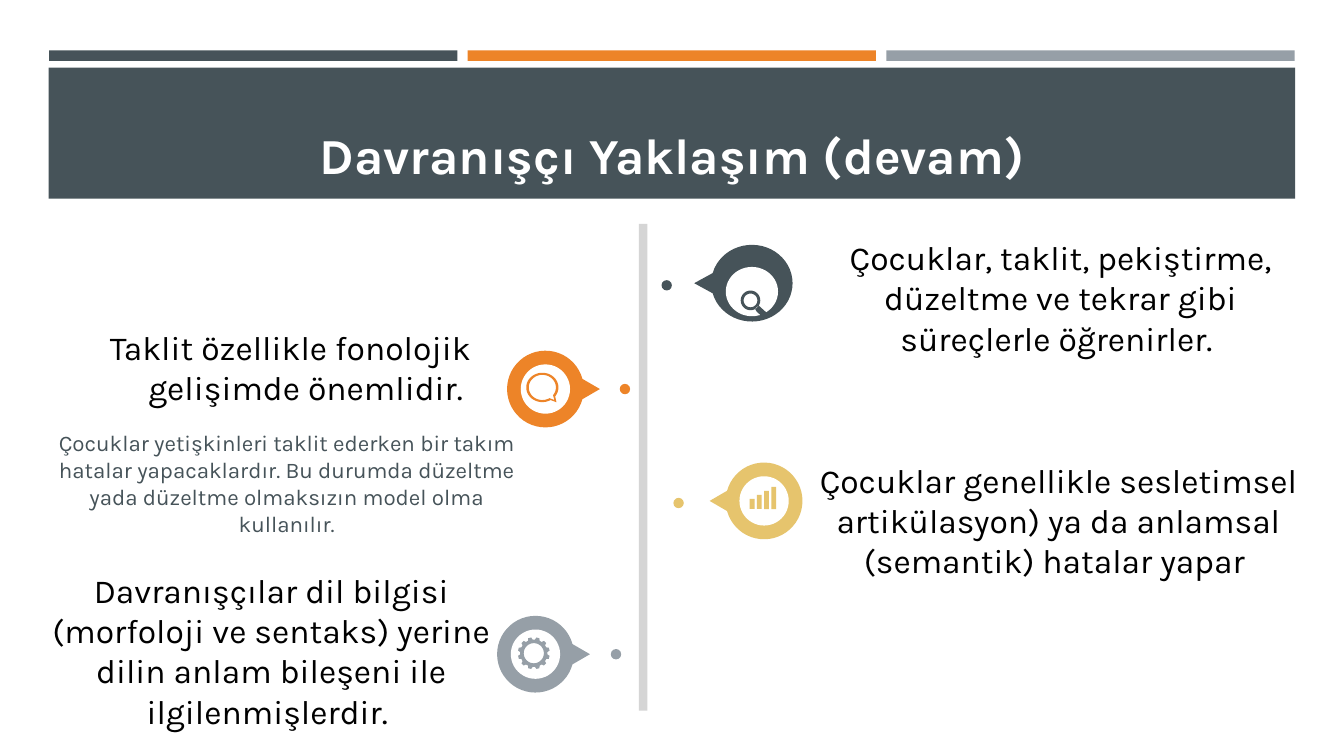
import math

from pptx import Presentation
from pptx import util as u
from pptx.dml.color import RGBColor
from pptx.enum import shapes, text

SLATE, ORANGE, SILVER, SAND = "465359", "ED8428", "969FA7", "E6C46D"
WHITE, BLACK, DIVIDER = "FFFFFF", "000000", "D5D5D5"


def color(value):
    return RGBColor.from_string(value)


def polar(center, radii, degrees):
    angle = math.radians(degrees)
    return (center[0] + radii[0] * math.cos(angle),
            center[1] + radii[1] * math.sin(angle))


def ring_points(center, radius):
    return [polar(center, (radius, radius), step * 10) for step in range(36)]


def drop_points(center, radii, tip, direction, half_gap):
    """Ellipse whose arc opens around one direction and runs out to a tip."""
    steps = 48
    sweep = 360 - 2 * half_gap
    arc = [polar(center, radii, direction + half_gap + sweep * step / steps)
           for step in range(steps + 1)]
    return arc + [(center[0] + tip[0], center[1] + tip[1])]


def gear_points(center, root, outer, teeth=12):
    profile = [(-10, root), (-5.5, outer), (5.5, outer), (10, root)]
    return [polar(center, (radius, radius), 360 / teeth * (tooth + 0.5) + offset)
            for tooth in range(teeth) for offset, radius in profile]


class SlideBuilder:
    font = "Karla"

    def __init__(self, slide):
        self.slide = slide

    def paint(self, shape, fill):
        shape.shadow.inherit = False
        shape.fill.solid()
        shape.fill.fore_color.rgb = color(fill)
        shape.line.fill.background()

    def rectangle(self, left, top, width, height, fill):
        shape = self.slide.shapes.add_shape(
            shapes.MSO_SHAPE.RECTANGLE,
            u.Pt(left), u.Pt(top), u.Pt(width), u.Pt(height))
        self.paint(shape, fill)

    def ellipse(self, center, radii, fill):
        shape = self.slide.shapes.add_shape(
            shapes.MSO_SHAPE.OVAL,
            u.Pt(center[0] - radii[0]), u.Pt(center[1] - radii[1]),
            u.Pt(2 * radii[0]), u.Pt(2 * radii[1]))
        self.paint(shape, fill)

    def outline(self, contours, fill):
        """Filled freeform; a contour inside another one cuts a hole."""
        contours = [[(u.Pt(x), u.Pt(y)) for x, y in contour] for contour in contours]
        builder = self.slide.shapes.build_freeform(*contours[0][0])
        for index, contour in enumerate(contours):
            if index:
                builder.move_to(*contour[0])
            builder.add_line_segments(contour[1:], close=True)
        self.paint(builder.convert_to_shape(), fill)

    def add_text(self, content, left, top, width, height, size=24, fill=BLACK,
                 bold=False, align=text.PP_ALIGN.CENTER,
                 anchor=text.MSO_ANCHOR.TOP, inset=7.2):
        shape = self.slide.shapes.add_textbox(
            u.Pt(left), u.Pt(top), u.Pt(width), u.Pt(height))
        frame = shape.text_frame
        frame.word_wrap = True
        frame.vertical_anchor = anchor
        frame.margin_left = frame.margin_right = u.Pt(inset)
        frame.margin_top = frame.margin_bottom = u.Pt(inset)
        paragraph = frame.paragraphs[0]
        paragraph.alignment = align
        run = paragraph.add_run()
        run.text = content
        run.font.name = self.font
        run.font.size = u.Pt(size)
        run.font.bold = bold
        run.font.color.rgb = color(fill)

    def pin(self, center, dot, fill, points_right, stretch=1.0, hole_drop=0):
        """Round marker with a white hole, pointing at a dot by the divider."""
        x, y = center
        tip = 38.9 * stretch * (1 if points_right else -1)
        direction = 0 if points_right else 180
        self.outline([drop_points(center, (27.4 * stretch, 27.4), (tip, 0),
                                  direction, 15.3)], fill)
        self.ellipse((x, y + hole_drop), (17.6 * stretch, 17.6), WHITE)
        self.ellipse(dot, (3.7, 3.7), fill)

    def magnifier(self, center, fill):
        x, y = center
        handle = [(3.2, 5.8), (5.8, 3.6), (12.2, 9.4), (12.6, 11.2), (12.2, 12.2),
                  (10.8, 13), (9, 12.2), (4.3, 7.9)]
        self.outline([ring_points(center, 7), ring_points(center, 4.9),
                      [(x + dx, y + dy) for dx, dy in handle]], fill)

    def speech_bubble(self, center, fill):
        self.outline([drop_points(center, (11.5, 10.5), (10.1, 10.6), 48, 11),
                      drop_points(center, (9.7, 9), (8.6, 9), 48, 10)], fill)

    def gear(self, center, fill):
        self.outline([gear_points(center, 9.8, 11.4), ring_points(center, 7.2)], fill)

    def rising_bars(self, left, bottom, fill):
        for index in range(4):
            height = 7.2 + 2.9 * index
            self.rectangle(left + 5.15 * index, bottom - height, 3.5, height, fill)


def main():
    presentation = Presentation()
    presentation.slide_width, presentation.slide_height = u.Pt(960), u.Pt(540)
    builder = SlideBuilder(presentation.slides.add_slide(presentation.slide_layouts[6]))

    for index, fill in enumerate((SLATE, ORANGE, SILVER)):
        builder.rectangle(35.1 + 299 * index, 36, 291.6, 7.5, fill)
    builder.rectangle(34.8, 48.4, 890.4, 93.6, SLATE)
    builder.add_text("Davranışçı Yaklaşım (devam)", 46, 55.4, 868, 80, size=36,
                     fill=WHITE, bold=True, anchor=text.MSO_ANCHOR.BOTTOM, inset=3.6)
    builder.rectangle(456.3, 160, 6.2, 347.6, DIVIDER)

    builder.pin((537.1, 202.3), (476.2, 203.8), SLATE, False, stretch=1.06, hole_drop=6)
    builder.magnifier((536.1, 214.6), SLATE)
    builder.add_text("Çocuklar, taklit, pekiştirme, düzeltme ve tekrar gibi süreçlerle "
                     "öğrenirler. ", 578.2, 162, 358.6, 59)

    builder.pin((389.6, 277.9), (446.4, 277.9), ORANGE, True)
    builder.speech_bubble((387.4, 276.8), ORANGE)
    builder.add_text("Taklit özellikle fonolojik gelişimde önemlidir. ",
                     2.9, 226.1, 340.6, 59, align=text.PP_ALIGN.RIGHT)
    builder.add_text("Çocuklar yetişkinleri taklit ederken bir takım hatalar yapacaklardır. "
                     "Bu durumda düzeltme yada düzeltme olmaksızın model olma kullanılır.",
                     23, 299.5, 363.6, 85, size=16, fill=SLATE)

    builder.pin((545.8, 357.8), (484.7, 359.3), SAND, False)
    builder.rising_bars(535.5, 363.6, SAND)
    builder.add_text("Çocuklar genellikle sesletimsel artikülasyon) ya da anlamsal "
                     "(semantik) hatalar yapar ", 574.6, 321.1, 362.9, 59)

    builder.pin((382.5, 467.3), (440, 467.3), SILVER, True)
    builder.gear((381.3, 466.6), SILVER)
    builder.add_text("Davranışçılar dil bilgisi (morfoloji ve sentaks) yerine dilin anlam "
                     "bileşeni ile ilgilenmişlerdir. ", 20.2, 399.6, 347, 59)

    presentation.save("out.pptx")


if __name__ == "__main__":
    main()
